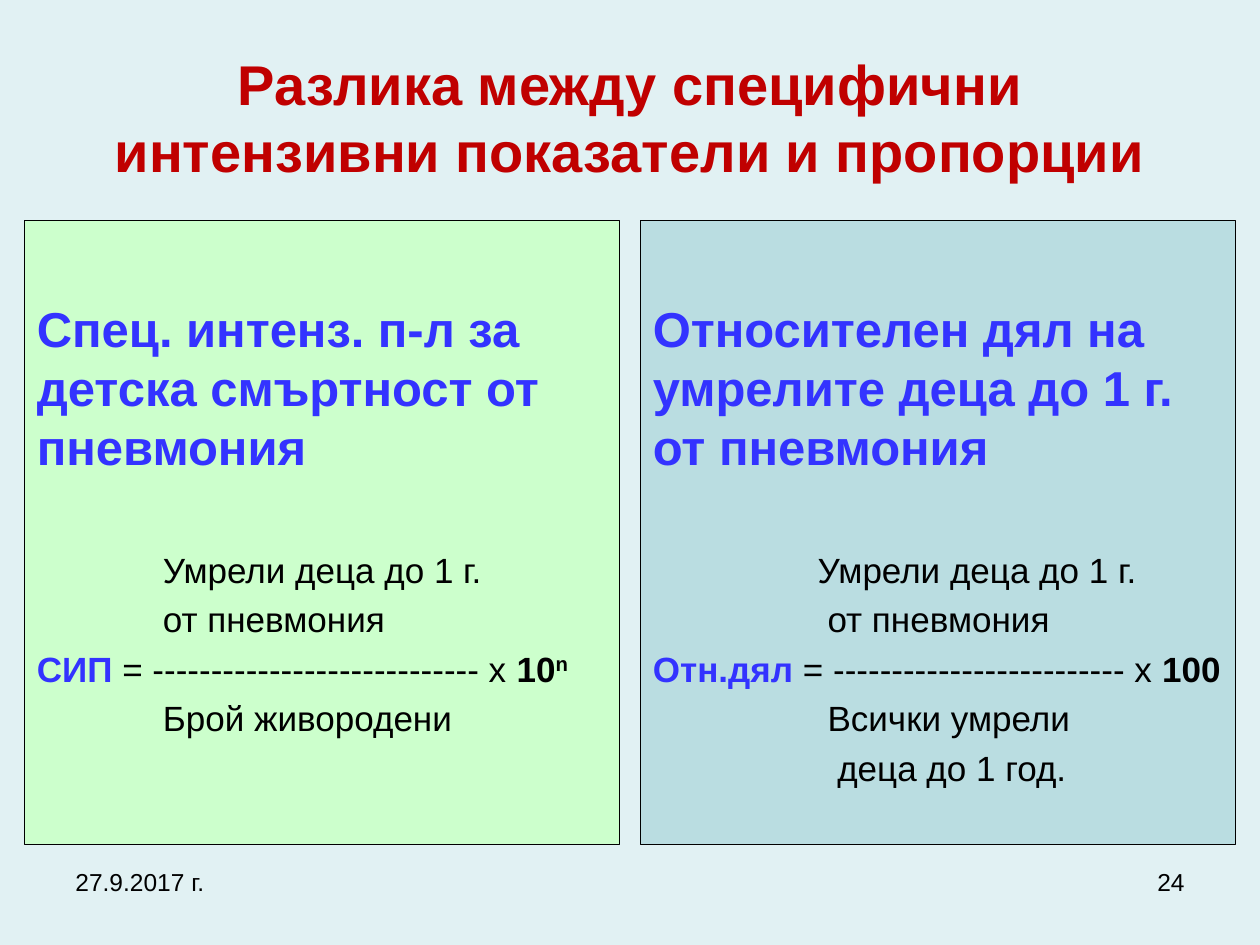
from pptx import Presentation
from pptx.dml.color import RGBColor
from pptx.enum.shapes import MSO_SHAPE
from pptx.enum.text import MSO_ANCHOR, PP_ALIGN
from pptx.util import Pt

COLORS = {
    "background": "E1F1F3",
    "title": "C00000",
    "accent": "3333FF",
    "text": "000000",
    "rate": "CCFFCC",
    "proportion": "BADDE1",
}
LINE_GAP = 4.2
FORMULA_GAP = 42


def color(name):
    return RGBColor.from_string(COLORS[name])


def add_span(para, text, size, tint="text", bold=False, raised=False):
    span = para.add_run()
    span.text = text
    span.font.name = "Arial"
    span.font.size = Pt(size)
    span.font.bold = bold
    span.font.color.rgb = color(tint)
    if raised:
        span.font._element.set("baseline", "30000")


def add_label(page, text, left, top, width, height, size, align,
              anchor=MSO_ANCHOR.TOP, tint="text", bold=False):
    box = page.shapes.add_textbox(Pt(left), Pt(top), Pt(width), Pt(height))
    frame = box.text_frame
    frame.word_wrap = True
    frame.vertical_anchor = anchor
    para = frame.paragraphs[0]
    para.alignment = align
    add_span(para, text, size, tint, bold)


def add_line(frame, spans, gap, indent):
    para = frame.add_paragraph()
    para.alignment = PP_ALIGN.LEFT
    para.space_before = Pt(gap)
    para._p.get_or_add_pPr().set("marL", str(Pt(indent)))
    for text, style in spans:
        add_span(para, text, 20, **style)


def add_panel(page, left, fill, heading, lines):
    box = page.shapes.add_shape(
        MSO_SHAPE.RECTANGLE, Pt(left), Pt(126), Pt(340), Pt(356.4))
    box.shadow.inherit = False
    box.fill.solid()
    box.fill.fore_color.rgb = color(fill)
    box.line.color.rgb = color("text")
    box.line.width = Pt(0.75)
    frame = box.text_frame
    frame.word_wrap = True
    frame.vertical_anchor = MSO_ANCHOR.TOP
    frame.margin_top = Pt(44.6)
    para = frame.paragraphs[0]
    para.alignment = PP_ALIGN.LEFT
    add_span(para, heading, 28, "accent", bold=True)
    for index, (indent, spans) in enumerate(lines):
        add_line(frame, spans, LINE_GAP if index else FORMULA_GAP, indent)


def main():
    """Build the slide that compares specific rates with proportions."""
    deck = Presentation()
    deck.slide_width, deck.slide_height = Pt(720), Pt(540)
    page = deck.slides.add_slide(deck.slide_layouts[6])
    page.background.fill.solid()
    page.background.fill.fore_color.rgb = color("background")

    plain, strong = {}, {"bold": True}
    accent = {"tint": "accent", "bold": True}
    raised = {"bold": True, "raised": True}

    add_label(page, "Разлика между специфични интензивни показатели и пропорции",
              36, 21.6, 648, 90, 32, PP_ALIGN.CENTER, MSO_ANCHOR.MIDDLE,
              "title", True)
    add_panel(page, 14, "rate",
              "Спец. интенз. п-л за детска смъртност от пневмония", [
                  (72, [("Умрели деца до 1 г.", plain)]),
                  (72, [("от пневмония", plain)]),
                  (0, [("СИП", accent),
                       (" = " + "-" * 28 + " х", plain),
                       (" 10", strong), ("n", raised)]),
                  (72, [("Брой живородени", plain)]),
              ])
    add_panel(page, 366, "proportion",
              "Относителен дял на умрелите деца до 1 г. от пневмония", [
                  (94.2, [("Умрели деца до 1 г.", plain)]),
                  (99.8, [("от пневмония", plain)]),
                  (0, [("Отн.дял", accent),
                       (" = " + "-" * 25 + " х ", plain),
                       ("100", strong)]),
                  (99.8, [("Всички умрели", plain)]),
                  (105.4, [("деца до 1 год.", plain)]),
              ])
    add_label(page, "24", 516, 492, 168, 37.5, 14, PP_ALIGN.RIGHT)
    add_label(page, "27.9.2017 г.", 36, 492, 168, 37.5, 14, PP_ALIGN.LEFT)
    deck.save("out.pptx")


if __name__ == "__main__":
    main()
